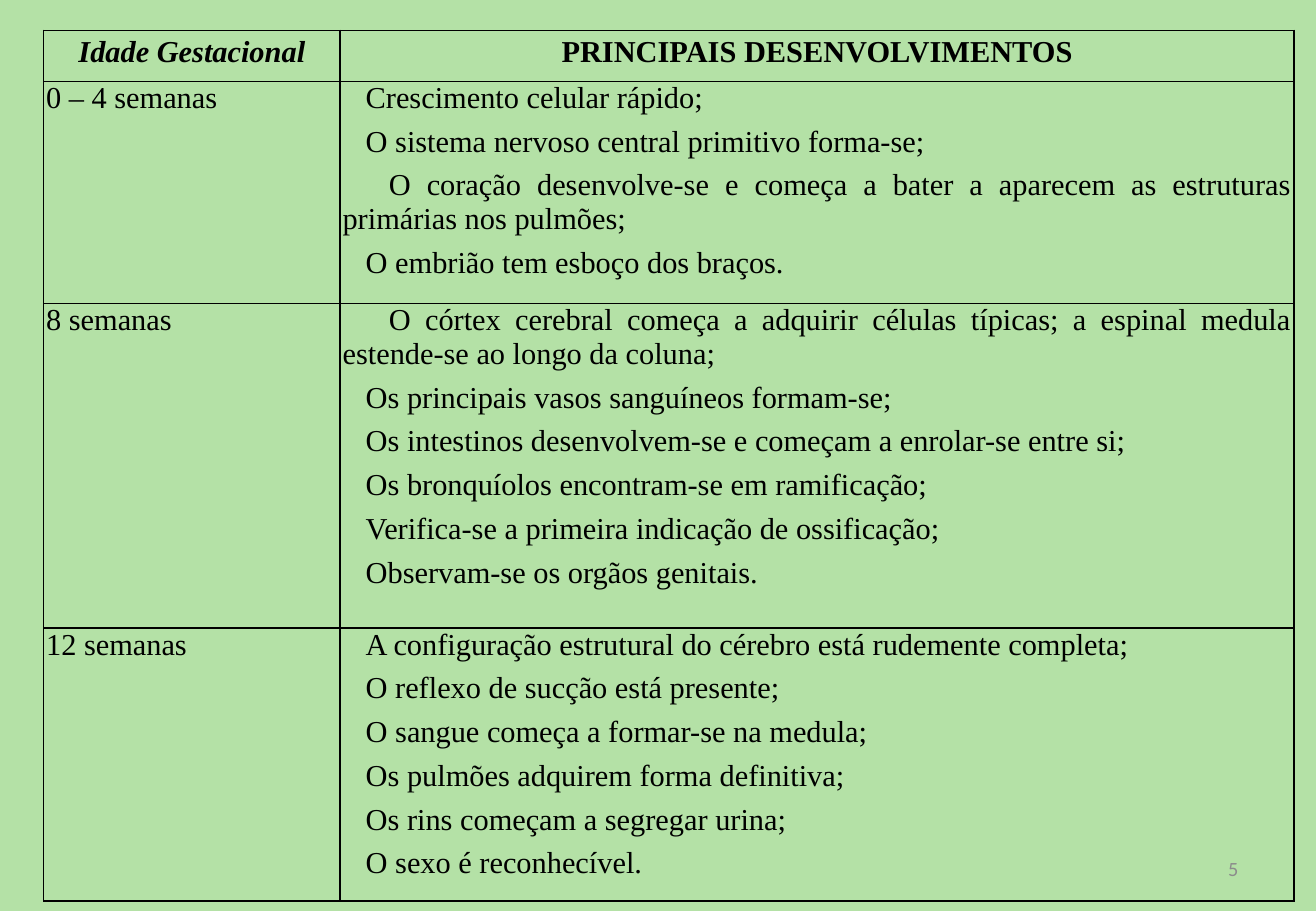
import pptx
import pptx.util
import pptx.dml.color
import pptx.enum.text
from lxml import etree
from pptx.oxml.ns import qn
from pptx.util import Inches, Pt

COLORS = {"background": "B4E1A6", "text": "000000", "border": "000000", "number": "8C8C8C"}
ALIGN = pptx.enum.text.PP_ALIGN
COLUMN_WIDTHS = [2.44, 7.85]
ROW_HEIGHTS = [0.42, 1.83, 2.67, 2.25]
HEADERS = ["Idade Gestacional", "PRINCIPAIS DESENVOLVIMENTOS"]
SHORT_INDENT, WRAPPED_INDENT = 0.19, 0.38
WRAPPED_LENGTH = 80
STAGES = [
    ("0 – 4 semanas", [
        "Crescimento celular rápido;",
        "O sistema nervoso central primitivo forma-se;",
        "O coração desenvolve-se e começa a bater a aparecem as estruturas primárias nos pulmões;",
        "O embrião tem esboço dos braços.",
    ]),
    ("8 semanas", [
        "O córtex cerebral começa a adquirir células típicas; a espinal medula "
        "estende-se ao longo da coluna;",
        "Os principais vasos sanguíneos formam-se;",
        "Os intestinos desenvolvem-se e começam a enrolar-se entre si;",
        "Os bronquíolos encontram-se em ramificação;",
        "Verifica-se a primeira indicação de ossificação;",
        "Observam-se os orgãos genitais.",
    ]),
    ("12 semanas", [
        "A configuração estrutural do cérebro está rudemente completa;",
        "O reflexo de sucção está presente;",
        "O sangue começa a formar-se na medula;",
        "Os pulmões adquirem forma definitiva;",
        "Os rins começam a segregar urina;",
        "O sexo é reconhecível.",
    ]),
]


def rgb(name):
    return pptx.dml.color.RGBColor.from_string(COLORS[name])


def set_font(paragraph, size, family, color):
    paragraph.font.size = Pt(size)
    paragraph.font.name = family
    paragraph.font.color.rgb = rgb(color)


def format_cell(cell):
    """Give the cell thin margins, a border on every side and no fill."""
    cell.margin_left = cell.margin_right = Inches(0.02)
    cell.margin_top = cell.margin_bottom = 0
    properties = cell._tc.get_or_add_tcPr()
    for side in ("lnL", "lnR", "lnT", "lnB"):
        line = etree.SubElement(properties, qn(f"a:{side}"), w=str(Pt(1)))
        fill = etree.SubElement(line, qn("a:solidFill"))
        etree.SubElement(fill, qn("a:srgbClr"), val=COLORS["border"])
    cell.fill.background()


def write_header(cell, text, italic):
    format_cell(cell)
    heading = cell.text_frame.paragraphs[0]
    heading.text = text
    heading.alignment = ALIGN.CENTER
    heading.line_spacing = 1.15
    set_font(heading, 18, "Times New Roman", "text")
    heading.font.bold = True
    heading.font.italic = italic


def write_body(cell, lines, indented=False):
    format_cell(cell)
    frame = cell.text_frame
    for index, text in enumerate(lines):
        paragraph = frame.add_paragraph() if index else frame.paragraphs[0]
        paragraph.text = text
        paragraph.alignment = ALIGN.JUSTIFY
        paragraph.space_after = Pt(6)
        if indented:
            indent = WRAPPED_INDENT if len(text) > WRAPPED_LENGTH else SHORT_INDENT
            properties = paragraph._p.get_or_add_pPr()
            properties.set("marL", "0")
            properties.set("indent", str(Inches(indent)))
        set_font(paragraph, 18, "Times New Roman", "text")


def add_development_table(slide):
    table = slide.shapes.add_table(
        len(ROW_HEIGHTS), len(COLUMN_WIDTHS), Inches(0.36), Inches(0.25),
        Inches(sum(COLUMN_WIDTHS)), Inches(sum(ROW_HEIGHTS))).table
    table.first_row = table.horz_banding = False
    for column, width in zip(table.columns, COLUMN_WIDTHS):
        column.width = Inches(width)
    for row, height in zip(table.rows, ROW_HEIGHTS):
        row.height = Inches(height)
    for column, text in enumerate(HEADERS):
        write_header(table.cell(0, column), text, italic=column == 0)
    for row, (age, developments) in enumerate(STAGES, start=1):
        write_body(table.cell(row, 0), [age])
        write_body(table.cell(row, 1), developments, indented=True)


def add_page_number(slide, number):
    frame = slide.shapes.add_textbox(
        Inches(7.76), Inches(6.95), Inches(2.53), Inches(0.4)).text_frame
    frame.word_wrap = True
    frame.vertical_anchor = pptx.enum.text.MSO_ANCHOR.MIDDLE
    paragraph = frame.paragraphs[0]
    paragraph.text = str(number)
    paragraph.alignment = ALIGN.RIGHT
    set_font(paragraph, 12, "Calibri", "number")


def main():
    presentation = pptx.Presentation()
    presentation.slide_width = Inches(10.83)
    presentation.slide_height = Inches(7.5)
    slide = presentation.slides.add_slide(presentation.slide_layouts[6])
    slide.background.fill.solid()
    slide.background.fill.fore_color.rgb = rgb("background")
    add_development_table(slide)
    add_page_number(slide, 5)
    presentation.save("out.pptx")


if __name__ == "__main__":
    main()
